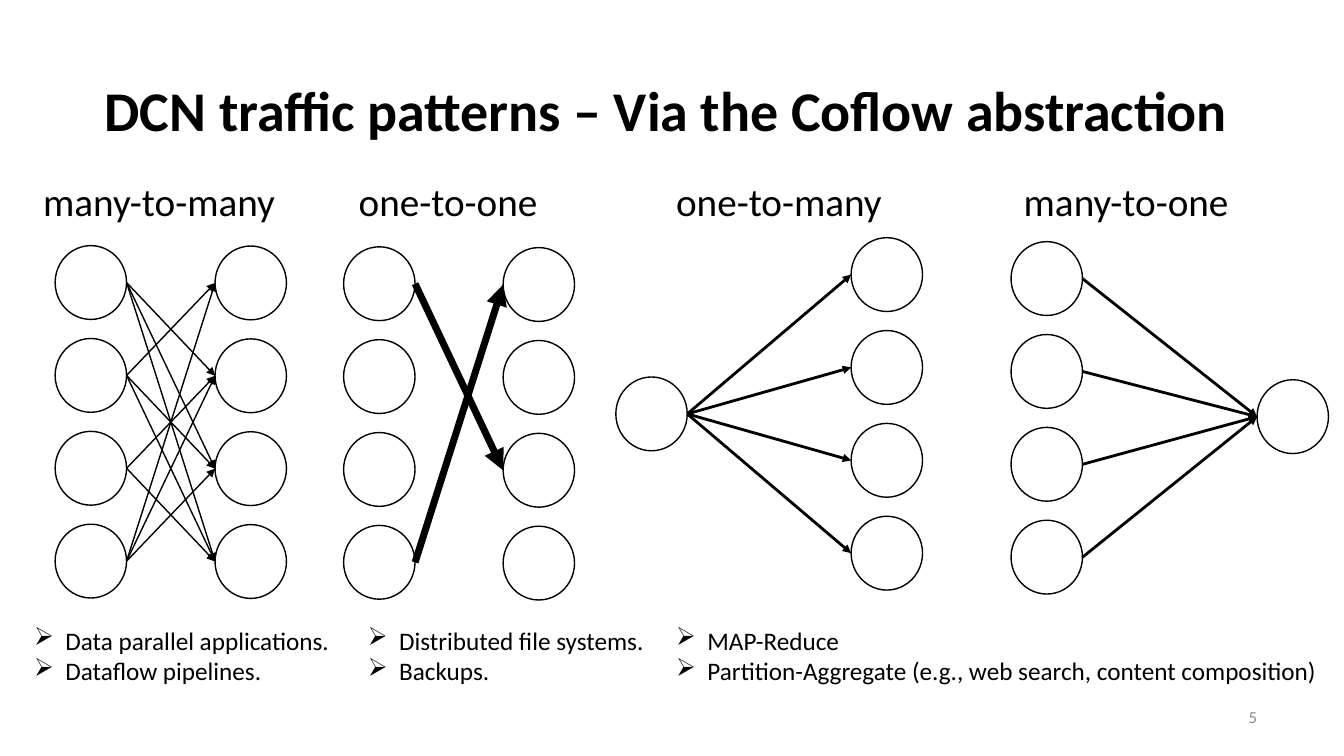
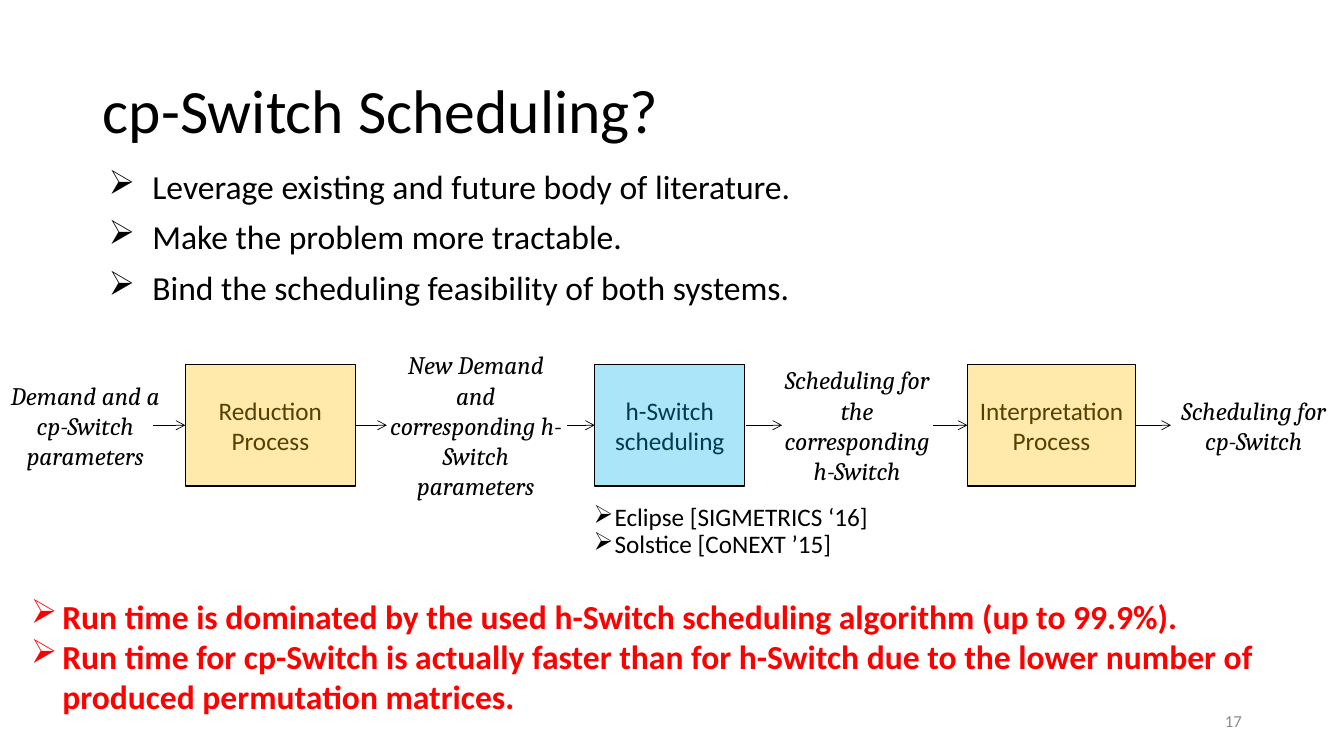
"""Build two slides on data centre traffic patterns and cp-Switch scheduling."""

from lxml.etree import SubElement
from pptx import Presentation
from pptx.dml.color import RGBColor
from pptx.enum.shapes import MSO_CONNECTOR, MSO_SHAPE
from pptx.enum.text import MSO_ANCHOR, MSO_AUTO_SIZE, PP_ALIGN
from pptx.oxml.ns import qn
from pptx.util import Cm, Pt

BLACK = RGBColor(0x00, 0x00, 0x00)
GREY = RGBColor(0x8C, 0x8C, 0x8C)
RED = RGBColor(0xFF, 0x00, 0x00)
AMBER_FILL = RGBColor(0xFF, 0xEA, 0xAB)
AMBER_TEXT = RGBColor(0x54, 0x40, 0x00)
BLUE_FILL = RGBColor(0xAB, 0xE5, 0xFA)
BLUE_TEXT = RGBColor(0x00, 0x3A, 0x4F)

NODE_WIDTH, NODE_HEIGHT, NODE_PITCH = 1.8, 1.86, 2.34

PATTERNS = [
    {"name": "many-to-many", "name_left": 0.84, "weight": 1,
     "senders": (2.29, 7.12, 4), "receivers": (6.32, 7.13, 4),
     "flows": [(0, 1), (0, 2), (0, 3), (1, 0), (1, 2), (1, 3),
               (2, 1), (2, 3), (3, 0), (3, 1), (3, 2)]},
    {"name": "one-to-one", "name_left": 8.79, "weight": 5,
     "senders": (9.56, 7.15, 4), "receivers": (13.58, 7.17, 4),
     "flows": [(0, 2), (3, 0)]},
    {"name": "one-to-many", "name_left": 16.79, "weight": 2,
     "senders": (16.42, 10.43, 1), "receivers": (22.35, 6.92, 4),
     "flows": [(0, 0), (0, 1), (0, 2), (0, 3)]},
    {"name": "many-to-one", "name_left": 25.55, "weight": 2,
     "senders": (26.38, 7.02, 4), "receivers": (32.58, 10.5, 1),
     "flows": [(0, 0), (1, 0), (2, 0), (3, 0)]},
]

USES = [
    (0.61, 8.99, ["Data parallel applications.", "Dataflow pipelines."]),
    (9.02, 8.2, ["Distributed file systems.", "Backups."]),
    (16.79, 17.04, ["MAP-Reduce",
                    "Partition-Aggregate (e.g., web search, content composition)"]),
]

GOALS = [
    "Leverage existing and future body of literature.",
    "Make the problem more tractable.",
    "Bind the scheduling feasibility of both systems.",
]

STAGE_TOP, STAGE_HEIGHT = 9.18, 3.07
STAGES = [
    (4.67, 4.29, ["Reduction", "Process"], AMBER_FILL, AMBER_TEXT),
    (14.99, 3.78, ["h-Switch scheduling"], BLUE_FILL, BLUE_TEXT),
    (24.38, 4.24, ["Interpretation", "Process"], AMBER_FILL, AMBER_TEXT),
]
STAGE_DATA = [
    (0.13, 4.04, "Demand and a cp-Switch parameters"),
    (9.73, 4.52, "New Demand and corresponding h-Switch parameters"),
    (19.53, 4.14, "Scheduling for the corresponding h-Switch"),
    (29.46, 4.27, "Scheduling for cp-Switch"),
]
STAGE_ARROWS = [(3.86, 4.67), (8.94, 9.75), (14.3, 14.99),
                (18.8, 19.71), (23.52, 24.38), (28.63, 29.51)]

ALGORITHMS = ["Eclipse [SIGMETRICS ‘16]", "Solstice [CoNEXT ’15]"]
FINDINGS = [
    "Run time is dominated by the used h-Switch scheduling algorithm (up to 99.9%).",
    "Run time for cp-Switch is actually faster than for h-Switch due to the lower "
    "number of produced permutation matrices.",
]


def write(text_frame, lines, size, color=BLACK, font="Calibri", bold=False,
          italic=False, align=PP_ALIGN.LEFT, line_spacing=None, before=0,
          bullet_indent=None):
    """Fill a text frame with equally formatted paragraphs."""
    text_frame.word_wrap = True
    text_frame.auto_size = MSO_AUTO_SIZE.NONE
    text_frame.text = "\n".join(lines)
    for paragraph in text_frame.paragraphs:
        paragraph.alignment = align
        paragraph.space_before = Pt(before)
        if line_spacing:
            paragraph.line_spacing = line_spacing
        if bullet_indent:
            properties = paragraph._p.get_or_add_pPr()
            properties.set("marL", str(Cm(bullet_indent)))
            properties.set("indent", str(-Cm(bullet_indent)))
            SubElement(properties, qn("a:buChar")).set("char", "➢")
        for run in paragraph.runs:
            run.font.name = font
            run.font.size = Pt(size)
            run.font.bold = bold
            run.font.italic = italic
            run.font.color.rgb = color


def add_text(slide, left, top, width, height, lines, size, **style):
    """Add a text box and return its text frame."""
    box = slide.shapes.add_textbox(Cm(left), Cm(top), Cm(width), Cm(height))
    write(box.text_frame, lines, size, **style)
    return box.text_frame


def add_outlined(slide, kind, left, top, width, height):
    """Add an unfilled shape with a thin black outline."""
    shape = slide.shapes.add_shape(kind, Cm(left), Cm(top), Cm(width), Cm(height))
    shape.shadow.inherit = False
    shape.fill.background()
    shape.line.color.rgb = BLACK
    shape.line.width = Pt(1)
    return shape


def add_arrow(slide, start, end, weight, head="triangle"):
    """Add a straight black arrow between two points."""
    arrow = slide.shapes.add_connector(
        MSO_CONNECTOR.STRAIGHT, *(Cm(value) for value in (*start, *end)))
    arrow.line.color.rgb = BLACK
    arrow.line.width = Pt(weight)
    SubElement(arrow.line._get_or_add_ln(), qn("a:tailEnd")).set("type", head)
    SubElement(arrow._element.spPr, qn("a:effectLst"))


def add_titled_slide(presentation, title, number, number_left, number_top, **style):
    """Add a title-only slide with its title and page number."""
    slide = presentation.slides.add_slide(presentation.slide_layouts[5])
    shape = slide.shapes.title
    shape.left, shape.top, shape.width, shape.height = (
        Cm(2.34), Cm(1.02), Cm(29.21), Cm(3.68))
    write(shape.text_frame, [title], line_spacing=0.9, **style)
    shape.text_frame.vertical_anchor = MSO_ANCHOR.MIDDLE
    frame = add_text(slide, number_left, number_top, 7.62, 1.02, [number], 12,
                     color=GREY, align=PP_ALIGN.RIGHT)
    frame.vertical_anchor = MSO_ANCHOR.MIDDLE
    return slide


def add_nodes(slide, center, first, count):
    """Draw a column of nodes and return their centres."""
    centers = [(center, first + row * NODE_PITCH) for row in range(count)]
    for x, y in centers:
        add_outlined(slide, MSO_SHAPE.OVAL, x - NODE_WIDTH / 2,
                     y - NODE_HEIGHT / 2, NODE_WIDTH, NODE_HEIGHT)
    return centers


def add_pattern(slide, pattern):
    """Draw one named traffic pattern."""
    add_text(slide, pattern["name_left"], 4.34, 7, 1.45, [pattern["name"]], 28)
    senders = add_nodes(slide, *pattern["senders"])
    receivers = add_nodes(slide, *pattern["receivers"])
    for source, target in pattern["flows"]:
        start_x, start_y = senders[source]
        end_x, end_y = receivers[target]
        add_arrow(slide, (start_x + NODE_WIDTH / 2, start_y),
                  (end_x - NODE_WIDTH / 2, end_y), pattern["weight"])


def build_patterns(presentation):
    """Build the traffic pattern slide."""
    slide = add_titled_slide(
        presentation, "DCN traffic patterns – Via the Coflow abstraction ", "5",
        24.31, 17.55, size=40, bold=True, align=PP_ALIGN.CENTER)
    for pattern in PATTERNS:
        add_pattern(slide, pattern)
    for left, width, lines in USES:
        add_text(slide, left, 15.62, width, 1.8, lines, 18, bullet_indent=0.79)


def build_scheduling(presentation):
    """Build the scheduling slide."""
    slide = add_titled_slide(presentation, "cp-Switch Scheduling?", "17",
                             23.93, 17.65, size=44)
    add_text(slide, 2.49, 4.17, 29.21, 3.8, GOALS, 24, line_spacing=0.9,
             before=10, bullet_indent=1.1)
    for left, width, lines, fill, color in STAGES:
        stage = add_outlined(slide, MSO_SHAPE.RECTANGLE, left, STAGE_TOP,
                             width, STAGE_HEIGHT)
        stage.fill.solid()
        stage.fill.fore_color.rgb = fill
        write(stage.text_frame, lines, 18, color=color, align=PP_ALIGN.CENTER)
        stage.text_frame.vertical_anchor = MSO_ANCHOR.MIDDLE
    middle = STAGE_TOP + STAGE_HEIGHT / 2
    for left, width, label in STAGE_DATA:
        frame = add_text(slide, left, middle - 2.06, width, 4.12, [label], 18,
                         font="Cambria", italic=True, align=PP_ALIGN.CENTER)
        frame.margin_left = frame.margin_right = 0
        frame.vertical_anchor = MSO_ANCHOR.MIDDLE
    for start, end in STAGE_ARROWS:
        add_arrow(slide, (start, middle), (end, middle), 0.5, "arrow")
    add_text(slide, 14.71, 12.6, 8, 1.65, ALGORITHMS, 18, line_spacing=0.9,
             bullet_indent=0.53)
    add_text(slide, 0.53, 14.88, 32.77, 3.33, FINDINGS, 24, color=RED, bold=True,
             bullet_indent=0.79)


def main():
    """Build and save the presentation."""
    presentation = Presentation()
    presentation.slide_width = Cm(33.87)
    presentation.slide_height = Cm(19.05)
    build_patterns(presentation)
    build_scheduling(presentation)
    presentation.save("out.pptx")


if __name__ == "__main__":
    main()
